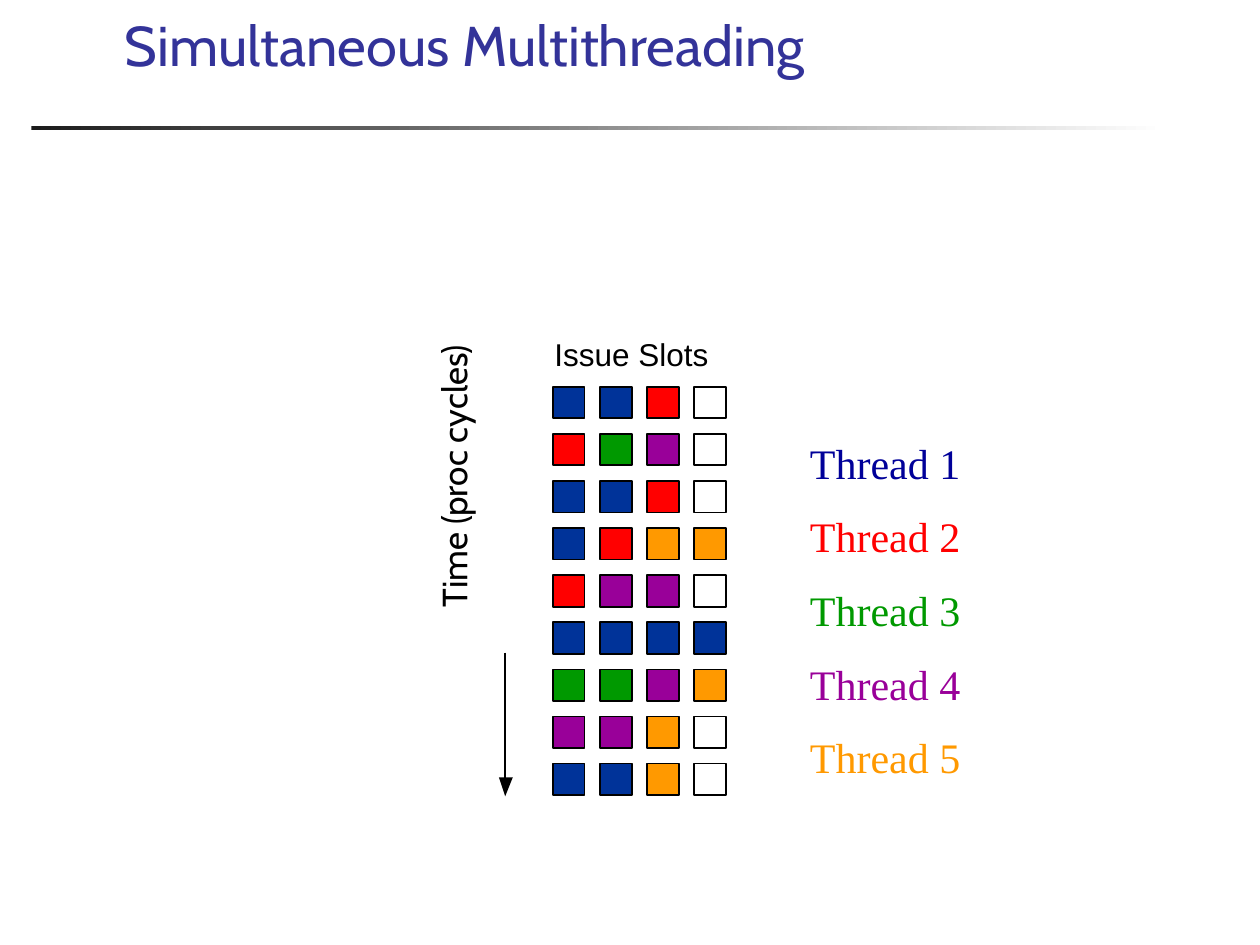
from lxml import etree
from pptx import Presentation
from pptx.dml.color import RGBColor
from pptx.enum.shapes import MSO_CONNECTOR, MSO_SHAPE
from pptx.enum.text import MSO_ANCHOR, MSO_AUTO_SIZE, PP_ALIGN
from pptx.oxml.ns import qn
from pptx.util import Inches, Pt

RECTANGLE = MSO_SHAPE.RECTANGLE
STRAIGHT = MSO_CONNECTOR.STRAIGHT
TOP, BOTTOM = MSO_ANCHOR.TOP, MSO_ANCHOR.BOTTOM
NO_AUTOFIT = MSO_AUTO_SIZE.NONE
LEFT = PP_ALIGN.LEFT

SLOT_COLORS = {"1": "003399", "2": "FF0000", "3": "009900",
               "4": "990099", "5": "FF9900", "-": "FFFFFF"}
# One string per processor cycle: the thread that fills each issue slot
CYCLES = ["112-", "234-", "112-", "1255", "244-", "1111", "3345", "445-", "115-"]
THREAD_COLORS = ["000099", "FF0000", "009900", "990099", "FF9900"]


def color(hex_string):
    return RGBColor.from_string(hex_string)


def format_text(paragraph, text, font_name, size, hex_string):
    paragraph.text = text
    paragraph.alignment = LEFT
    values = {"name": font_name, "size": Pt(size)}
    for attribute, value in values.items():
        setattr(paragraph.font, attribute, value)
    paragraph.font.color.rgb = color(hex_string)


presentation = Presentation()
presentation.slide_width = Inches(10)
presentation.slide_height = Inches(7.5)
slide = presentation.slides.add_slide(presentation.slide_layouts[1])
shapes = slide.shapes

# Rule under the title
rule = shapes.add_shape(RECTANGLE, Inches(0.25), Inches(1), Inches(9), Inches(0.03))
rule.shadow.inherit = False
rule.line.fill.background()
rule.fill.gradient()
rule.fill.gradient_angle = 0
for stop, position, hex_string in zip(rule.fill.gradient_stops, (0, 1), ("1C1C1C", "FFFFFF")):
    stop.position = position
    stop.color.rgb = color(hex_string)

# Title and the rotated time label
title, time_label = shapes.title, slide.placeholders[1]
placeholder_formats = [
    (title, (0.89, 0.15, 8.86, 0.52), BOTTOM),
    (time_label, (1.98, 3.07, 3.29, 0.41), TOP),
]
for placeholder, box, anchor in placeholder_formats:
    for attribute, length in zip(("left", "top", "width", "height"), box):
        setattr(placeholder, attribute, Inches(length))
    frame_values = {"vertical_anchor": anchor, "auto_size": NO_AUTOFIT, "word_wrap": True}
    for attribute, value in frame_values.items():
        setattr(placeholder.text_frame, attribute, value)

format_text(title.text_frame.paragraphs[0], "Simultaneous Multithreading", "Cabin", 32, "333399")

time_label.rotation = 270
paragraph = time_label.text_frame.paragraphs[0]
properties = paragraph._p.get_or_add_pPr()
properties.set("marL", str(Inches(0.38)))
properties.set("indent", str(Inches(-0.38)))
etree.SubElement(properties, qn("a:buNone"))
paragraph.line_spacing = 0.9
paragraph.space_before = Pt(0)
format_text(paragraph, "Time (proc cycles)", "Cabin", 20, "000000")

# Grid of issue slots
first_left, last_left = 4.39, 5.51
first_top, last_top = 3.07, 6.06
column_pitch = (last_left - first_left) / 3
row_pitch = (last_top - first_top) / (len(CYCLES) - 1)
for row, cycle in enumerate(CYCLES):
    for column, thread in enumerate(cycle):
        slot = shapes.add_shape(
            RECTANGLE,
            Inches(first_left + column * column_pitch),
            Inches(first_top + row * row_pitch),
            Inches(0.25), Inches(0.25))
        slot.shadow.inherit = False
        slot.fill.solid()
        slot.fill.fore_color.rgb = color(SLOT_COLORS[thread])
        slot.line.color.rgb = color("000000")
        slot.line.width = Pt(1)

# Heading of the grid
heading = shapes.add_textbox(Inches(4.4), Inches(2.66), Inches(1.31), Inches(0.35))
for side in ("left", "top", "right", "bottom"):
    setattr(heading.text_frame, f"margin_{side}", 0)
heading.text_frame.word_wrap = False
format_text(heading.text_frame.paragraphs[0], "Issue Slots", "Arial", 18, "000000")

# Time arrow
shaft = shapes.add_connector(STRAIGHT, Inches(4.01), Inches(5.18), Inches(4.01), Inches(6.28))
shaft.line.color.rgb = color("000000")
shaft.line.width = Pt(1)
etree.SubElement(shaft._element.spPr, qn("a:effectLst"))

builder = shapes.build_freeform(Inches(4.01), Inches(6.32))
builder.add_line_segments([(Inches(3.96), Inches(6.17)), (Inches(4.07), Inches(6.17))], close=True)
arrowhead = builder.convert_to_shape()
arrowhead.shadow.inherit = False
arrowhead.fill.solid()
arrowhead.fill.fore_color.rgb = color("000000")
arrowhead.line.fill.background()

# Thread legend
legend = shapes.add_textbox(Inches(6.33), Inches(3.42), Inches(2.17), Inches(2.9))
legend.text_frame.word_wrap = True
for number, hex_string in enumerate(THREAD_COLORS, start=1):
    if number == 1:
        paragraph = legend.text_frame.paragraphs[0]
    else:
        paragraph = legend.text_frame.add_paragraph()
        paragraph.space_before = Pt(13.3)
    format_text(paragraph, f"Thread {number}", "Times New Roman", 24, hex_string)

presentation.save("out.pptx")
